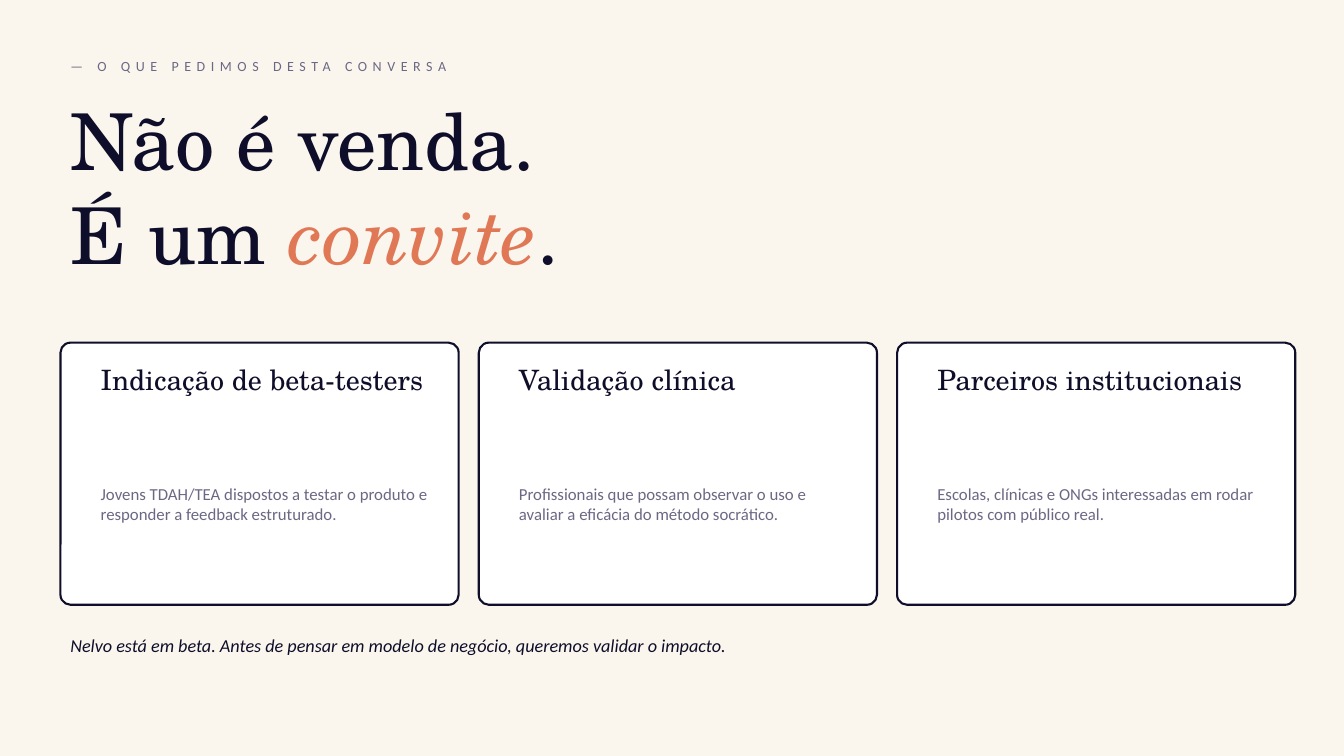
from dataclasses import dataclass

from pptx import Presentation
from pptx.dml.color import RGBColor
from pptx.enum.shapes import MSO_SHAPE
from pptx.enum.text import MSO_ANCHOR, MSO_AUTO_SIZE, PP_ALIGN
from pptx.util import Pt

EYEBROW = "— O QUE PEDIMOS DESTA CONVERSA"
TITLE_LINES = [
    [("Não é venda.", "title")],
    [("É um ", "title"), ("convite", "accent"), (".", "title")],
]
CARDS = [
    ("Indicação de beta-testers",
     "Jovens TDAH/TEA dispostos a testar o produto e responder a feedback estruturado."),
    ("Validação clínica",
     "Profissionais que possam observar o uso e avaliar a eficácia do método socrático."),
    ("Parceiros institucionais",
     "Escolas, clínicas e ONGs interessadas em rodar pilotos com público real."),
]
CLOSING = ("Nelvo está em beta. Antes de pensar em modelo de negócio, "
           "queremos validar o impacto.")


@dataclass(frozen=True)
class Theme:
    paper: RGBColor = RGBColor.from_string("FAF6EE")
    card: RGBColor = RGBColor.from_string("FFFFFF")
    ink: RGBColor = RGBColor.from_string("0F0E2A")
    muted: RGBColor = RGBColor.from_string("6B6884")
    coral: RGBColor = RGBColor.from_string("E07856")
    serif: str = "TeX Gyre Schola"
    sans: str = "Calibri"

    def formats(self):
        title = {"name": self.serif, "size": Pt(56), "color": self.ink, "italic": False}
        return {
            "eyebrow": {"name": self.sans, "size": Pt(10), "color": self.muted},
            "title": title,
            "accent": title | {"color": self.coral, "italic": True},
            "heading": {"name": self.serif, "size": Pt(20), "color": self.ink},
            "body": {"name": self.sans, "size": Pt(12), "color": self.muted},
            "closing": {"name": self.sans, "size": Pt(13), "color": self.ink,
                        "italic": True},
        }


THEME = Theme()
FORMATS = THEME.formats()

LEFT, TEXT_WIDTH = 43.2, 864
CARD_TOP, CARD_WIDTH, CARD_HEIGHT, CARD_GAP = 244.8, 284.4, 187.2, 14.4
CARD_INDENT, CARD_TEXT_WIDTH = 21.6, 248.4


def add_run(paragraph, text, style):
    run = paragraph.add_run()
    run.text = text
    for attribute, value in FORMATS[style].items():
        if attribute == "color":
            run.font.color.rgb = value
        else:
            setattr(run.font, attribute, value)
    return run


def add_text(slide, text, style, box, anchor=MSO_ANCHOR.TOP):
    frame = slide.shapes.add_textbox(*map(Pt, box)).text_frame
    frame.word_wrap = True
    frame.vertical_anchor = anchor
    return add_run(frame.paragraphs[0], text, style)


def fill_title(title):
    title.left, title.top, title.width, title.height = map(
        Pt, (LEFT, 68.4, TEXT_WIDTH, 129.6))
    frame = title.text_frame
    frame.word_wrap = True
    frame.auto_size = MSO_AUTO_SIZE.NONE
    frame.vertical_anchor = MSO_ANCHOR.MIDDLE
    paragraph = frame.paragraphs[0]
    paragraph.alignment = PP_ALIGN.LEFT
    for index, line in enumerate(TITLE_LINES):
        if index:
            paragraph.add_line_break()
        for text, style in line:
            add_run(paragraph, text, style)


def add_card(slide, left, heading, body):
    card = slide.shapes.add_shape(
        MSO_SHAPE.ROUNDED_RECTANGLE,
        *map(Pt, (left, CARD_TOP, CARD_WIDTH, CARD_HEIGHT)))
    card.adjustments[0] = 0.038
    card.shadow.inherit = False
    card.fill.solid()
    card.fill.fore_color.rgb = THEME.card
    card.line.color.rgb = THEME.ink
    card.line.width = Pt(1.5)
    text_left = left + CARD_INDENT
    add_text(slide, heading, "heading",
             (text_left, CARD_TOP + 10.8, CARD_TEXT_WIDTH, 79.2))
    add_text(slide, body, "body",
             (text_left, CARD_TOP + 97.2, CARD_TEXT_WIDTH, 108))


def main():
    presentation = Presentation()
    presentation.slide_width, presentation.slide_height = Pt(960), Pt(540)
    slide = presentation.slides.add_slide(
        presentation.slide_layouts.get_by_name("Title Only"))
    slide.background.fill.solid()
    slide.background.fill.fore_color.rgb = THEME.paper

    eyebrow = add_text(slide, EYEBROW, "eyebrow", (LEFT, 36, TEXT_WIDTH, 21.6),
                       MSO_ANCHOR.MIDDLE)
    eyebrow.font._element.set("spc", "400")
    fill_title(slide.shapes.title)
    for column, (heading, body) in enumerate(CARDS):
        add_card(slide, LEFT + column * (CARD_WIDTH + CARD_GAP), heading, body)
    add_text(slide, CLOSING, "closing", (LEFT, 446.4, TEXT_WIDTH, 28.8),
             MSO_ANCHOR.MIDDLE)
    presentation.save("out.pptx")


if __name__ == "__main__":
    main()
